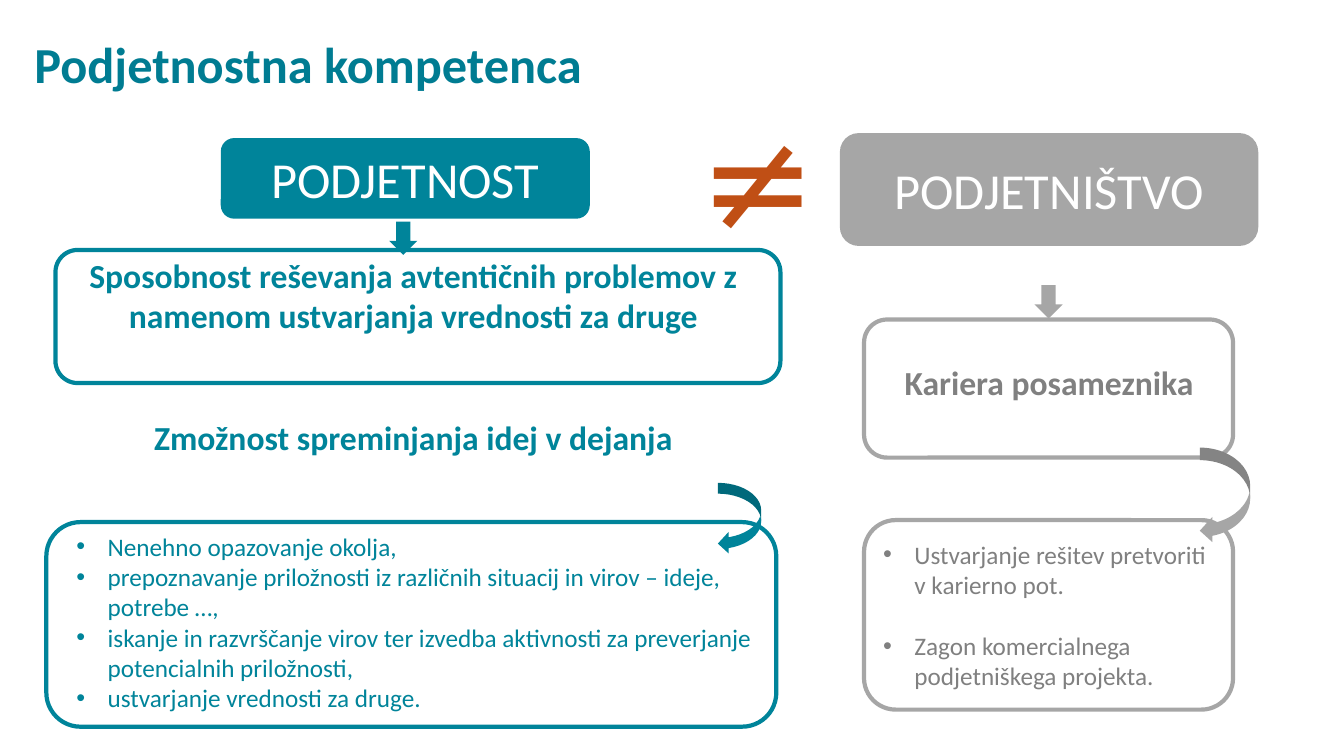
"""Build the slide comparing podjetnost with podjetništvo."""
from dataclasses import dataclass

from lxml import etree
from pptx import Presentation
from pptx import util as u
from pptx.dml.color import RGBColor
from pptx.enum import shapes, text
from pptx.oxml.ns import qn

TEAL, GREY, DARK_GREY = "00849A", "A6A6A6", "808080"
TITLE_TEAL, ORANGE, WHITE = "007C92", "C04F15", "FFFFFF"
SHAPE = shapes.MSO_SHAPE
ALIGN = text.PP_ALIGN
ANCHOR = text.MSO_ANCHOR


@dataclass(frozen=True)
class Area:
    left: float
    top: float
    width: float
    height: float

    def lengths(self) -> list:
        return [u.Inches(n) for n in (self.left, self.top, self.width, self.height)]


@dataclass(frozen=True)
class Style:
    size: int
    color: str
    bold: bool = False
    font: str = "Calibri"
    align: ALIGN = ALIGN.CENTER
    bulleted: bool = False
    gap: int = 0


@dataclass(frozen=True)
class Block:
    kind: SHAPE
    area: Area
    color: str
    filled: bool = True
    lines: tuple = ()
    style: Style | None = None


@dataclass(frozen=True)
class Caption:
    area: Area
    lines: tuple
    style: Style


def rgb(color: str) -> RGBColor:
    return RGBColor.from_string(color)


def add_bullet(paragraph) -> None:
    props = paragraph._p.get_or_add_pPr()
    props.set("marL", str(u.Inches(0.31)))
    props.set("indent", str(u.Inches(-0.31)))
    etree.SubElement(props, qn("a:buFont"), typeface="Arial")
    etree.SubElement(props, qn("a:buChar"), char="•")


def write(frame, lines: tuple, style: Style, anchor: ANCHOR) -> None:
    frame.word_wrap = True
    frame.auto_size = text.MSO_AUTO_SIZE.NONE
    frame.vertical_anchor = anchor
    for index, line in enumerate(lines):
        paragraph = frame.add_paragraph() if index else frame.paragraphs[0]
        paragraph.text = line
        if style.bulleted:
            add_bullet(paragraph)
        paragraph.alignment = style.align
        if index and style.gap:
            paragraph.space_before = u.Pt(style.gap)
        font = paragraph.font
        font.name, font.size, font.bold = style.font, u.Pt(style.size), style.bold
        font.color.rgb = rgb(style.color)


def draw_block(slide, block: Block) -> None:
    shape = slide.shapes.add_shape(block.kind, *block.area.lengths())
    shape.shadow.inherit = False
    if block.filled:
        shape.fill.solid()
        shape.fill.fore_color.rgb = rgb(block.color)
        shape.line.fill.background()
    else:
        shape.fill.background()
        shape.line.color.rgb = rgb(block.color)
        shape.line.width = u.Pt(3)
    if block.style:
        write(shape.text_frame, block.lines, block.style, ANCHOR.MIDDLE)


def draw_caption(slide, caption: Caption) -> None:
    box = slide.shapes.add_textbox(*caption.area.lengths())
    write(box.text_frame, caption.lines, caption.style, ANCHOR.TOP)


HEADING = Style(36, WHITE)
DEFINITION = Style(24, TEAL, bold=True, gap=58)
CAREER = Style(24, DARK_GREY, bold=True)
ABILITIES = Style(18, TEAL, align=ALIGN.LEFT, bulleted=True)
OUTCOMES = Style(18, DARK_GREY, align=ALIGN.LEFT, bulleted=True, gap=22)

BLOCKS = (
    Block(SHAPE.ROUNDED_RECTANGLE, Area(2.19, 1.37, 3.66, 0.8), TEAL,
          lines=("PODJETNOST",), style=HEADING),
    Block(SHAPE.ROUNDED_RECTANGLE, Area(8.33, 1.32, 4.15, 1.12), GREY,
          lines=("PODJETNIŠTVO",), style=HEADING),
    Block(SHAPE.ROUNDED_RECTANGLE, Area(0.55, 2.48, 7.19, 1.32), TEAL, filled=False),
    Block(SHAPE.ROUNDED_RECTANGLE, Area(0.46, 5.18, 7.24, 2.03), TEAL, filled=False),
    Block(SHAPE.ROUNDED_RECTANGLE, Area(8.57, 3.17, 3.66, 1.37), GREY, filled=False),
    Block(SHAPE.ROUNDED_RECTANGLE, Area(8.57, 5.16, 3.66, 1.88), GREY, filled=False,
          lines=("Ustvarjanje rešitev pretvoriti v karierno pot.",
                 "Zagon komercialnega podjetniškega projekta."), style=OUTCOMES),
    Block(SHAPE.DOWN_ARROW, Area(3.86, 2.2, 0.28, 0.33), TEAL),
    Block(SHAPE.DOWN_ARROW, Area(10.26, 2.83, 0.28, 0.33), GREY),
    Block(SHAPE.CURVED_LEFT_ARROW, Area(7.12, 4.79, 0.43, 0.71), TEAL),
    Block(SHAPE.CURVED_LEFT_ARROW, Area(11.9, 4.44, 0.5, 0.95), GREY),
)

CAPTIONS = (
    Caption(Area(6.84, 0.86, 1, 1.78), ("≠",),
            Style(100, ORANGE, font="Cabin", align=ALIGN.LEFT)),
    Caption(Area(0.65, 2.48, 6.9, 2.42),
            ("Sposobnost reševanja avtentičnih problemov z namenom ustvarjanja "
             "vrednosti za druge",
             "Zmožnost spreminjanja idej v dejanja"), DEFINITION),
    Caption(Area(8.4, 3.54, 4.01, 1.18), ("Kariera posameznika",), CAREER),
    Caption(Area(0.66, 5.22, 6.9, 2.22),
            ("Nenehno opazovanje okolja,",
             "prepoznavanje priložnosti iz različnih situacij in virov – ideje, potrebe …,",
             "iskanje in razvrščanje virov ter izvedba aktivnosti za preverjanje "
             "potencialnih priložnosti,",
             "ustvarjanje vrednosti za druge."), ABILITIES),
)


def main() -> None:
    deck = Presentation()
    deck.slide_width, deck.slide_height = u.Inches(13.33), u.Inches(7.5)
    slide = deck.slides.add_slide(deck.slide_layouts[5])
    title = slide.shapes.title
    title.left, title.top, title.width, title.height = Area(0.24, 0.18, 11.5, 0.97).lengths()
    write(title.text_frame, ("Podjetnostna kompetenca",),
          Style(36, TITLE_TEAL, bold=True, align=ALIGN.LEFT), ANCHOR.MIDDLE)
    title.text_frame.paragraphs[0].line_spacing = 0.9
    for block in BLOCKS:
        draw_block(slide, block)
    for caption in CAPTIONS:
        draw_caption(slide, caption)
    deck.save("out.pptx")


if __name__ == "__main__":
    main()
